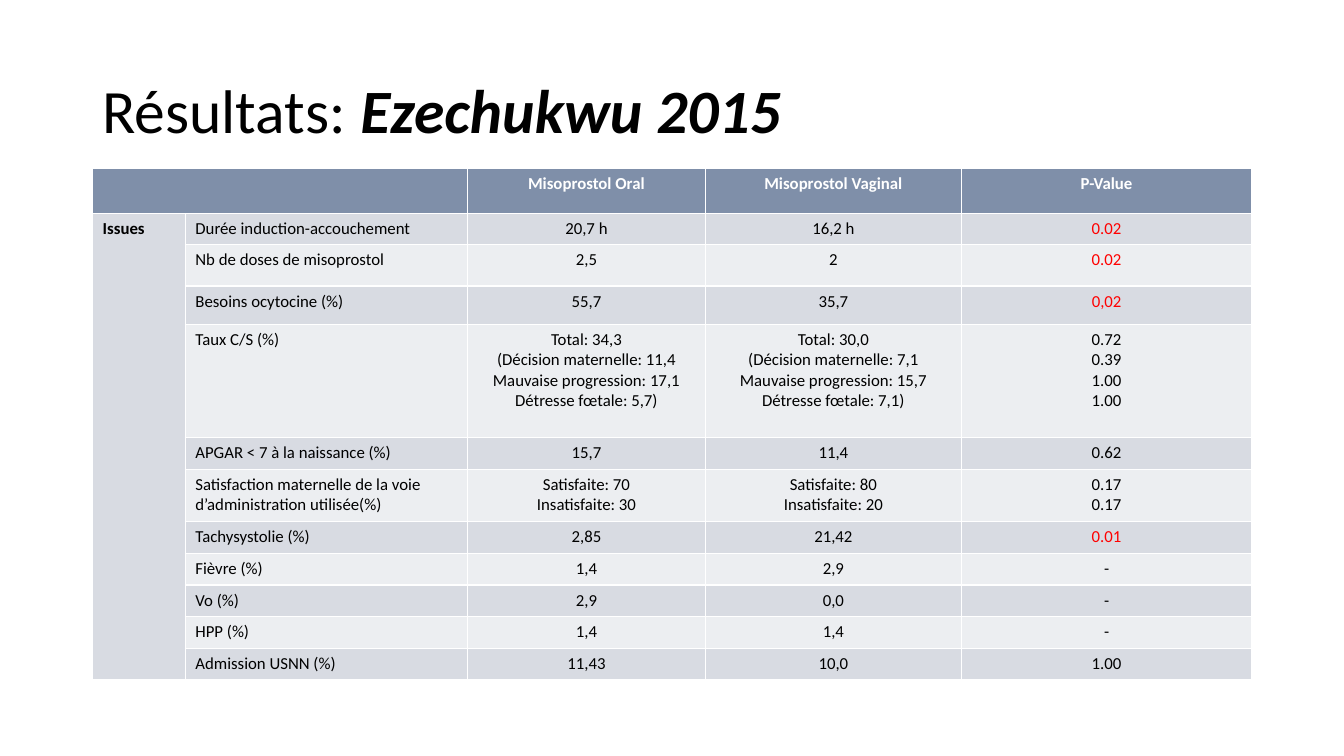
from dataclasses import dataclass

from pptx import Presentation
from pptx.dml.color import RGBColor
from pptx.enum.text import MSO_ANCHOR, MSO_AUTO_SIZE, PP_ALIGN as Align
from pptx.util import Pt


@dataclass(frozen=True)
class Theme:
    font: str = "Calibri"
    title_size: int = 44
    table_size: int = 12
    text: str = "000000"
    header_text: str = "FFFFFF"
    significant: str = "FF0000"
    header_fill: str = "7F8FA9"
    bands: tuple = ("D8DBE2", "ECEEF1")


THEME = Theme()
COLUMN_WIDTHS = (66.2, 201.6, 169.9, 182.9, 207.4)
ROW_HEIGHTS = (32.4, 22.3, 29.5, 27.4, 80.6, 23, 37.4) + (22.6,) * 5
HEADINGS = ("", "", "Misoprostol Oral", "Misoprostol Vaginal", "P-Value")
SIGNIFICANT_VALUES = ("0.01", "0.02", "0,02")
OUTCOMES = (
    ("Durée induction-accouchement", "20,7 h", "16,2 h", "0.02"),
    ("Nb de doses de misoprostol", "2,5", "2", "0.02"),
    ("Besoins ocytocine (%)", "55,7", "35,7", "0,02"),
    (
        "Taux C/S (%)",
        "Total: 34,3\n(Décision maternelle: 11,4\nMauvaise progression: 17,1\nDétresse fœtale: 5,7)",
        "Total: 30,0\n(Décision maternelle: 7,1\nMauvaise progression: 15,7\nDétresse fœtale: 7,1)",
        "0.72\n0.39\n1.00\n1.00",
    ),
    ("APGAR < 7 à la naissance (%)", "15,7", "11,4", "0.62"),
    (
        "Satisfaction maternelle de la voie d’administration utilisée(%)",
        "Satisfaite: 70\nInsatisfaite: 30",
        "Satisfaite: 80\nInsatisfaite: 20",
        "0.17\n0.17",
    ),
    ("Tachysystolie (%)", "2,85", "21,42", "0.01"),
    ("Fièvre (%)", "1,4", "2,9", "-"),
    ("Vo (%)", "2,9", "0,0", "-"),
    ("HPP (%)", "1,4", "1,4", "-"),
    ("Admission USNN (%)", "11,43", "10,0", "1.00"),
)


def add_span(para, text, size, color, bold=False, italic=False):
    span = para.add_run()
    span.text = text
    span.font.name = THEME.font
    span.font.size = Pt(size)
    span.font.bold = bold
    span.font.italic = italic
    span.font.color.rgb = RGBColor.from_string(color)


def fill_title(title):
    title.left, title.top, title.width, title.height = Pt(66), Pt(28.75), Pt(828), Pt(104.4)
    frame = title.text_frame
    frame.auto_size = MSO_AUTO_SIZE.NONE
    frame.vertical_anchor = MSO_ANCHOR.MIDDLE
    para = frame.paragraphs[0]
    para.alignment = Align.LEFT
    para.line_spacing = 0.9
    add_span(para, "Résultats: ", THEME.title_size, THEME.text)
    add_span(para, "Ezechukwu 2015", THEME.title_size, THEME.text, bold=True, italic=True)


def fill_cell(cell, text, fill, color, align, bold):
    cell.fill.solid()
    cell.fill.fore_color.rgb = RGBColor.from_string(fill)
    frame = cell.text_frame
    for index, line in enumerate(text.splitlines()):
        para = frame.add_paragraph() if index else frame.paragraphs[0]
        para.alignment = align
        add_span(para, line, THEME.table_size, color, bold)


def add_results_table(page):
    rows = [HEADINGS] + [("" if index else "Issues", *outcome) for index, outcome in enumerate(OUTCOMES)]
    frame = page.shapes.add_table(
        len(rows), len(COLUMN_WIDTHS), Pt(66.2), Pt(120.2), Pt(sum(COLUMN_WIDTHS)), Pt(sum(ROW_HEIGHTS))
    )
    table = frame.table
    for column, width in zip(table.columns, COLUMN_WIDTHS):
        column.width = Pt(width)
    for row, height in zip(table.rows, ROW_HEIGHTS):
        row.height = Pt(height)
    for row_index, values in enumerate(rows):
        header = row_index == 0
        for column_index, text in enumerate(values):
            band = 0 if column_index == 0 else (row_index - 1) % 2
            fill = THEME.header_fill if header else THEME.bands[band]
            color = THEME.significant if text in SIGNIFICANT_VALUES else THEME.text
            fill_cell(
                table.cell(row_index, column_index),
                text,
                fill,
                THEME.header_text if header else color,
                Align.CENTER if column_index > 1 else Align.LEFT,
                header or column_index == 0,
            )
    table.cell(0, 0).merge(table.cell(0, 1))
    table.cell(1, 0).merge(table.cell(len(rows) - 1, 0))


def main():
    deck = Presentation()
    deck.slide_width, deck.slide_height = Pt(960), Pt(540)
    page = deck.slides.add_slide(deck.slide_layouts[5])
    fill_title(page.shapes.title)
    add_results_table(page)
    deck.save("out.pptx")


if __name__ == "__main__":
    main()
